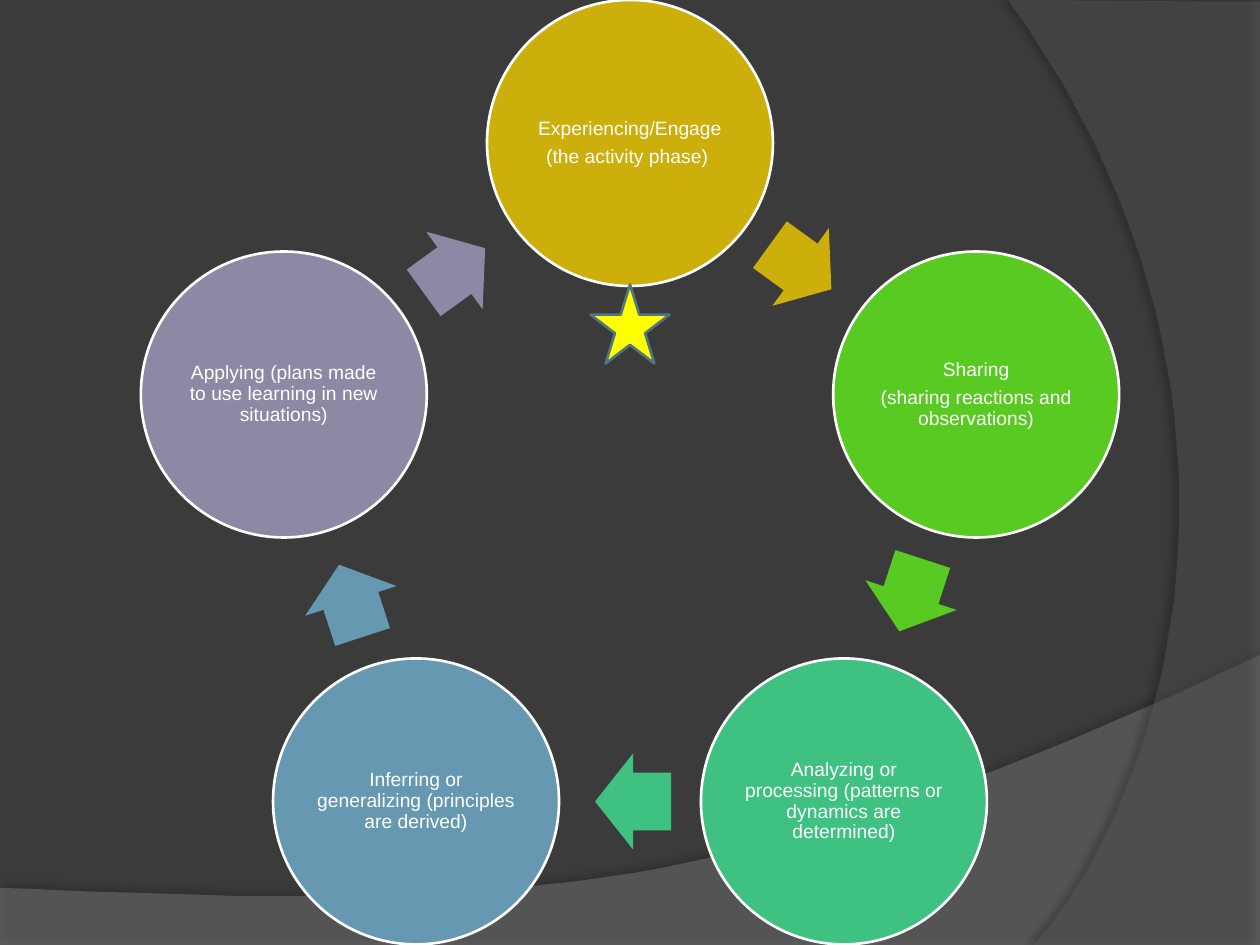
from math import cos, radians, sin

from lxml import etree
from pptx import Presentation
from pptx import util as u
from pptx.dml.color import RGBColor
from pptx.enum import shapes, text
from pptx.oxml.ns import qn

PX = 914400 / 126
WIDTH, HEIGHT = 1260, 945

BACKGROUND = RGBColor(0x3B, 0x3B, 0x3B)
FLOOR_GREY = RGBColor(0x7F, 0x7F, 0x7F)
SIDE_GREY = RGBColor(0x5E, 0x5E, 0x5E)
WHITE = RGBColor(0xFF, 0xFF, 0xFF)
YELLOW = RGBColor(0xFF, 0xFF, 0x00)
STAR_EDGE = RGBColor(0x51, 0x76, 0x82)
GOLD = RGBColor(0xCC, 0xAF, 0x0A)
GREEN = RGBColor(0x59, 0xCA, 0x22)
TEAL = RGBColor(0x3F, 0xC2, 0x81)
BLUE = RGBColor(0x66, 0x99, 0xB1)
PURPLE = RGBColor(0x8D, 0x89, 0xA4)

# Cycle geometry
CENTER_X, CENTER_Y, RADIUS = 630, 507, 364
STAGE_SIZE = 286
ARROW_LENGTH, ARROW_WIDTH = 76, 96
ARROW_SETBACK = 3

STAGES = [
    (["Experiencing/Engage", "(the activity phase) "], GOLD),
    (["Sharing", "(sharing reactions and observations)"], GREEN),
    (["Analyzing or processing (patterns or dynamics are determined)"], TEAL),
    (["Inferring or generalizing (principles are derived)"], BLUE),
    (["Applying (plans made to use learning in new situations)"], PURPLE),
]


def px(length):
    return u.Emu(round(length * PX))


def curve(start, control1, control2, end, steps=40):
    """Points along a cubic Bezier curve."""
    points = []
    for step in range(steps + 1):
        t = step / steps
        weights = ((1 - t) ** 3, 3 * t * (1 - t) ** 2, 3 * t * t * (1 - t), t ** 3)
        corners = (start, control1, control2, end)
        points.append(tuple(sum(w * c[axis] for w, c in zip(weights, corners))
                            for axis in (0, 1)))
    return points


def add_backdrop(slide, points, color, opacity, shadow_opacity, distance, direction):
    builder = slide.shapes.build_freeform(*points[0], scale=PX)
    builder.add_line_segments(points[1:], close=True)
    sweep = builder.convert_to_shape()
    sweep.fill.solid()
    sweep.fill.fore_color.rgb = color
    sweep.line.fill.background()
    # Transparency and soft shadow
    fill_color = sweep._element.spPr.find(qn("a:solidFill"))[0]
    etree.SubElement(fill_color, qn("a:alpha"), val=str(opacity * 1000))
    effects = etree.SubElement(sweep._element.spPr, qn("a:effectLst"))
    shadow = etree.SubElement(effects, qn("a:outerShdw"), blurRad=str(u.Pt(4)),
                              dist=str(u.Pt(distance)), dir=str(direction * 60000),
                              algn="ctr", rotWithShape="0")
    black = etree.SubElement(shadow, qn("a:srgbClr"), val="000000")
    etree.SubElement(black, qn("a:alpha"), val=str(shadow_opacity * 1000))


def add_figure(slide, kind, center_x, center_y, width, height, color, edge=None):
    figure = slide.shapes.add_shape(kind, px(center_x - width / 2),
                                    px(center_y - height / 2), px(width), px(height))
    figure.shadow.inherit = False
    figure.fill.solid()
    figure.fill.fore_color.rgb = color
    if edge is None:
        figure.line.fill.background()
    else:
        figure.line.color.rgb = edge
        figure.line.width = u.Pt(1.5)
    return figure


def on_cycle(angle, radius):
    """Point at a clockwise angle from the top of the cycle."""
    turn = radians(angle)
    return CENTER_X + radius * sin(turn), CENTER_Y - radius * cos(turn)


def add_stage(slide, angle, lines, color):
    stage = add_figure(slide, shapes.MSO_SHAPE.OVAL, *on_cycle(angle, RADIUS),
                       STAGE_SIZE, STAGE_SIZE, color, WHITE)
    frame = stage.text_frame
    frame.word_wrap = True
    frame.vertical_anchor = text.MSO_ANCHOR.MIDDLE
    frame.margin_left = frame.margin_right = px(2)
    frame.margin_top = frame.margin_bottom = px(2)
    for index, line in enumerate(lines):
        paragraph = frame.add_paragraph() if index else frame.paragraphs[0]
        paragraph.alignment = text.PP_ALIGN.CENTER
        paragraph.line_spacing = 0.9
        paragraph.space_after = u.Pt(4)
        run = paragraph.add_run()
        run.text = line
        run.font.name = "Arial"
        run.font.size = u.Pt(11)
        run.font.color.rgb = WHITE


def add_cycle_arrow(slide, angle, half_step, color):
    heading = angle + half_step
    x, y = on_cycle(heading, RADIUS * cos(radians(half_step)))
    x -= ARROW_SETBACK * cos(radians(heading))
    y -= ARROW_SETBACK * sin(radians(heading))
    arrow = add_figure(slide, shapes.MSO_SHAPE.RIGHT_ARROW, x, y,
                       ARROW_LENGTH, ARROW_WIDTH, color)
    arrow.adjustments[0] = 0.6
    arrow.adjustments[1] = 0.5
    arrow.rotation = heading


def main():
    deck = Presentation()
    deck.slide_width, deck.slide_height = px(WIDTH), px(HEIGHT)
    slide = deck.slides.add_slide(deck.slide_layouts[6])
    slide.background.fill.solid()
    slide.background.fill.fore_color.rgb = BACKGROUND

    # Backdrop sweeps
    floor = [(0, HEIGHT), (WIDTH, HEIGHT)]
    floor += curve((1260, 655), (704, 919), (493, 906), (0, 888))
    add_backdrop(slide, floor, FLOOR_GREY, 45, 35, 3.5, 270)
    side = [(WIDTH, 2), (WIDTH, HEIGHT)]
    side += curve((1034, 945), (1178, 780), (1283, 378), (1008, 0))
    add_backdrop(slide, side, SIDE_GREY, 40, 45, 4, 180)

    # Learning cycle
    step = 360 / len(STAGES)
    for index, (lines, color) in enumerate(STAGES):
        add_stage(slide, index * step, lines, color)
        add_cycle_arrow(slide, index * step, step / 2, color)

    # Starting point marker
    add_figure(slide, shapes.MSO_SHAPE.STAR_5_POINT, 630, 324, 79, 79,
               YELLOW, STAR_EDGE)
    deck.save("out.pptx")


if __name__ == "__main__":
    main()
